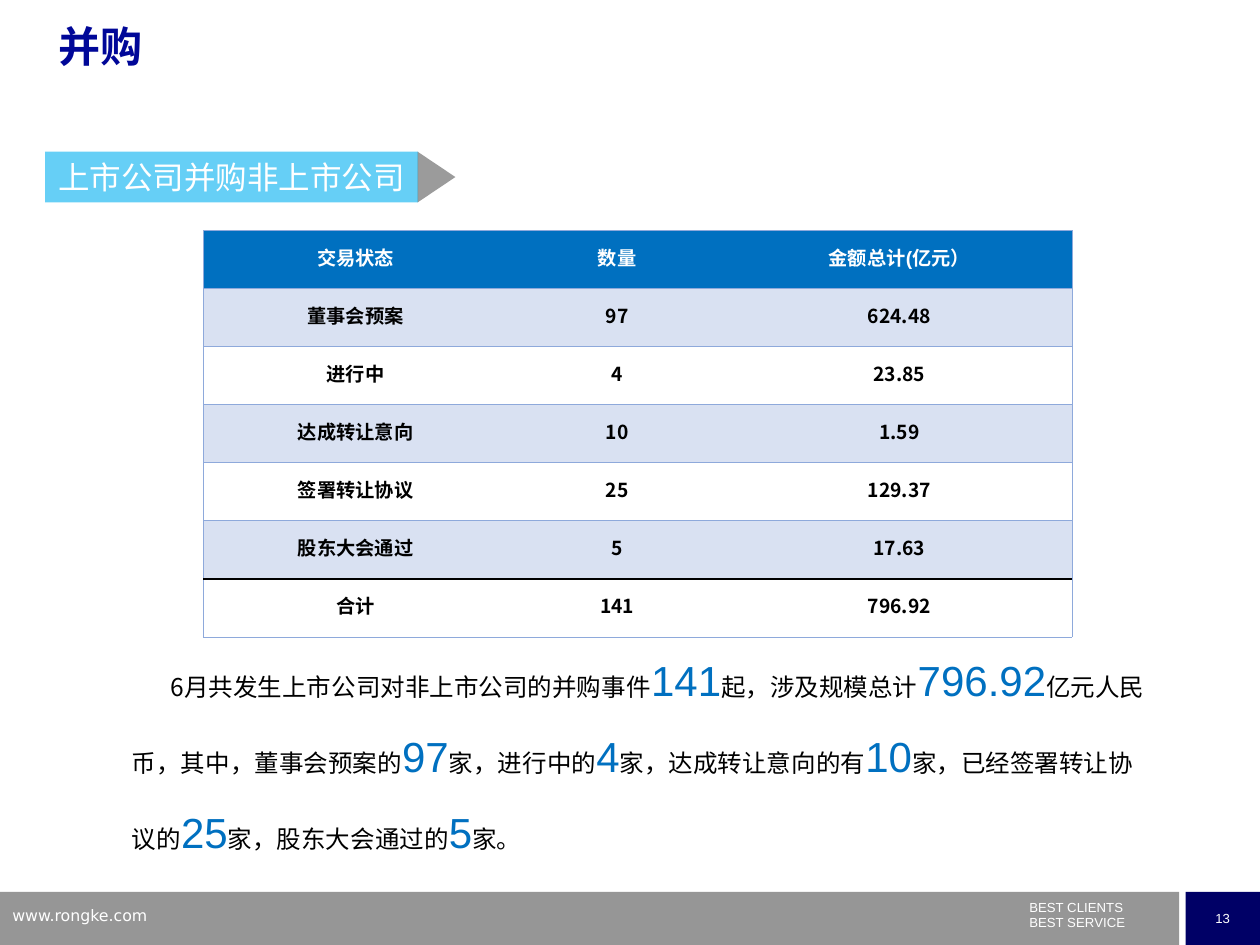
from lxml.etree import SubElement
from pptx import Presentation
from pptx.dml.color import RGBColor
from pptx.enum.shapes import MSO_SHAPE
from pptx.enum.text import MSO_ANCHOR, PP_ALIGN
from pptx.oxml.ns import qn
from pptx.util import Cm, Pt

COLORS = {
    "white": "FFFFFF", "black": "000000", "grey": "969696", "navy": "000066",
    "title": "000798", "sky": "00B0F0", "dark": "595959", "blue": "0070C0",
    "band": "D9E1F2", "rule": "8EA9DB",
}
LATIN, CHINESE, WEB = "Arial", "Noto Sans CJK SC", "DejaVu Sans"
PLAIN_TABLE = "{2D5ABB26-0587-4C30-8999-92F81FD0307C}"

DEALS = [
    ("交易状态", "数量", "金额总计(亿元）"),
    ("董事会预案", "97", "624.48"),
    ("进行中", "4", "23.85"),
    ("达成转让意向", "10", "1.59"),
    ("签署转让协议", "25", "129.37"),
    ("股东大会通过", "5", "17.63"),
    ("合计", "141", "796.92"),
]
COLUMN_WIDTHS = [6.12, 4.42, 6.96]
ROW_HEIGHT = 1.17

# Wording and highlighted figures alternate.
SUMMARY = [
    "6月共发生上市公司对非上市公司的并购事件", "141", "起，涉及规模总计", "796.92",
    "亿元人民币，其中，董事会预案的", "97", "家，进行中的", "4",
    "家，达成转让意向的有", "10", "家，已经签署转让协议的", "25",
    "家，股东大会通过的", "5", "家。",
]
SLOGAN = ["BEST CLIENTS", "BEST SERVICE"]


def color(name):
    return RGBColor.from_string(COLORS[name])


def add_span(para, text, size, tint, font=LATIN, bold=False):
    span = para.add_run()
    span.text = text
    span.font.size = Pt(size)
    span.font.bold = bold
    span.font.name = font
    span.font.color.rgb = color(tint)
    SubElement(span.font._element, qn("a:ea"), typeface=CHINESE)


def add_block(page, kind, place, tint, alpha=None):
    """Add a filled preset shape without outline; alpha is opacity in percent."""
    block = page.shapes.add_shape(kind, *map(Cm, place))
    block.shadow.inherit = False
    block.line.fill.background()
    block.fill.solid()
    block.fill.fore_color.rgb = color(tint)
    if alpha:
        srgb = block._element.spPr.find(".//" + qn("a:srgbClr"))
        SubElement(srgb, qn("a:alpha"), val=str(alpha * 1000))
    return block


def label_block(block, text, size, font=LATIN):
    frame = block.text_frame
    frame.word_wrap = False
    frame.vertical_anchor = MSO_ANCHOR.MIDDLE
    para = frame.paragraphs[0]
    para.alignment = PP_ALIGN.CENTER
    add_span(para, text, size, "white", font)


def add_text_frame(page, place):
    box = page.shapes.add_textbox(*map(Cm, place))
    box.text_frame.word_wrap = True
    return box.text_frame


def add_border(cell, side, tint, width):
    line = SubElement(cell._tc.get_or_add_tcPr(), qn("a:ln" + side), w=str(Pt(width)))
    fill = SubElement(line, qn("a:solidFill"))
    SubElement(fill, qn("a:srgbClr"), val=COLORS[tint])


def add_footer(page):
    add_block(page, MSO_SHAPE.RECTANGLE, (0, 17.98, 23.77, 1.07), "grey")
    number = add_block(page, MSO_SHAPE.RECTANGLE, (23.9, 17.98, 1.5, 1.07), "navy")
    label_block(number, "13", 7.5)

    frame = add_text_frame(page, (20.5, 18.14, 3.81, 0.74))
    for index, words in enumerate(SLOGAN):
        para = frame.add_paragraph() if index else frame.paragraphs[0]
        para.line_spacing = 0.5
        if index:
            para.space_before = Pt(4.3)
        add_span(para, words, 7.5, "white")

    frame = add_text_frame(page, (0, 18.14, 6.1, 0.66))
    add_span(frame.paragraphs[0], "www.rongke.com", 9, "white", WEB)


def add_headings(page):
    banner = add_block(page, MSO_SHAPE.RECTANGLE, (0.91, 3.06, 7.52, 1.02), "sky", 60)
    label_block(banner, "上市公司并购非上市公司", 18, CHINESE)
    arrow = add_block(page, MSO_SHAPE.ISOSCELES_TRIANGLE, (8.29, 3.19, 1.02, 0.76),
                      "dark", 60)
    arrow.rotation = 90

    para = add_text_frame(page, (0.94, 0.41, 22.86, 1.78)).paragraphs[0]
    para.line_spacing = 0.9
    add_span(para, "并购", 24, "title", bold=True)


def add_summary(page):
    para = add_text_frame(page, (2.41, 12.57, 20.93, 4.88)).paragraphs[0]
    para.line_spacing = 1.5
    para._p.get_or_add_pPr().set("indent", str(Cm(0.78)))
    for index, words in enumerate(SUMMARY):
        if index % 2:
            add_span(para, words, 24, "blue")
        else:
            add_span(para, words, 14, "black", CHINESE)


def add_deal_table(page):
    last_row, last_column = len(DEALS) - 1, len(COLUMN_WIDTHS) - 1
    table = page.shapes.add_table(
        len(DEALS), len(COLUMN_WIDTHS), Cm(4.11), Cm(4.65),
        Cm(sum(COLUMN_WIDTHS)), Cm(ROW_HEIGHT * len(DEALS))).table
    table._tbl.tblPr.find(qn("a:tableStyleId")).text = PLAIN_TABLE
    for column, width in zip(table.columns, COLUMN_WIDTHS):
        column.width = Cm(width)

    total_rule, thin_rule = ("black", 1), ("rule", 0.5)
    for r, record in enumerate(DEALS):
        table.rows[r].height = Cm(ROW_HEIGHT)
        for c, words in enumerate(record):
            cell = table.cell(r, c)
            cell.vertical_anchor = MSO_ANCHOR.MIDDLE
            cell.margin_left = cell.margin_right = cell.margin_top = Cm(0.02)
            cell.margin_bottom = Cm(0.13)
            if c == 0:
                add_border(cell, "L", *thin_rule)
            if c == last_column:
                add_border(cell, "R", *thin_rule)
            add_border(cell, "T", *(total_rule if r == last_row else thin_rule))
            add_border(cell, "B", *(total_rule if r == last_row - 1 else thin_rule))
            cell.fill.solid()
            fill = "blue" if r == 0 else "band" if r % 2 else "white"
            cell.fill.fore_color.rgb = color(fill)
            para = cell.text_frame.paragraphs[0]
            para.alignment = PP_ALIGN.CENTER
            font = CHINESE if r and c else LATIN
            add_span(para, words, 11, "black" if r else "white", font, bold=True)


def main():
    deck = Presentation()
    deck.slide_width, deck.slide_height = Cm(25.4), Cm(19.05)
    page = deck.slides.add_slide(deck.slide_layouts[6])
    add_footer(page)
    add_headings(page)
    add_summary(page)
    add_deal_table(page)
    deck.save("out.pptx")


if __name__ == "__main__":
    main()
